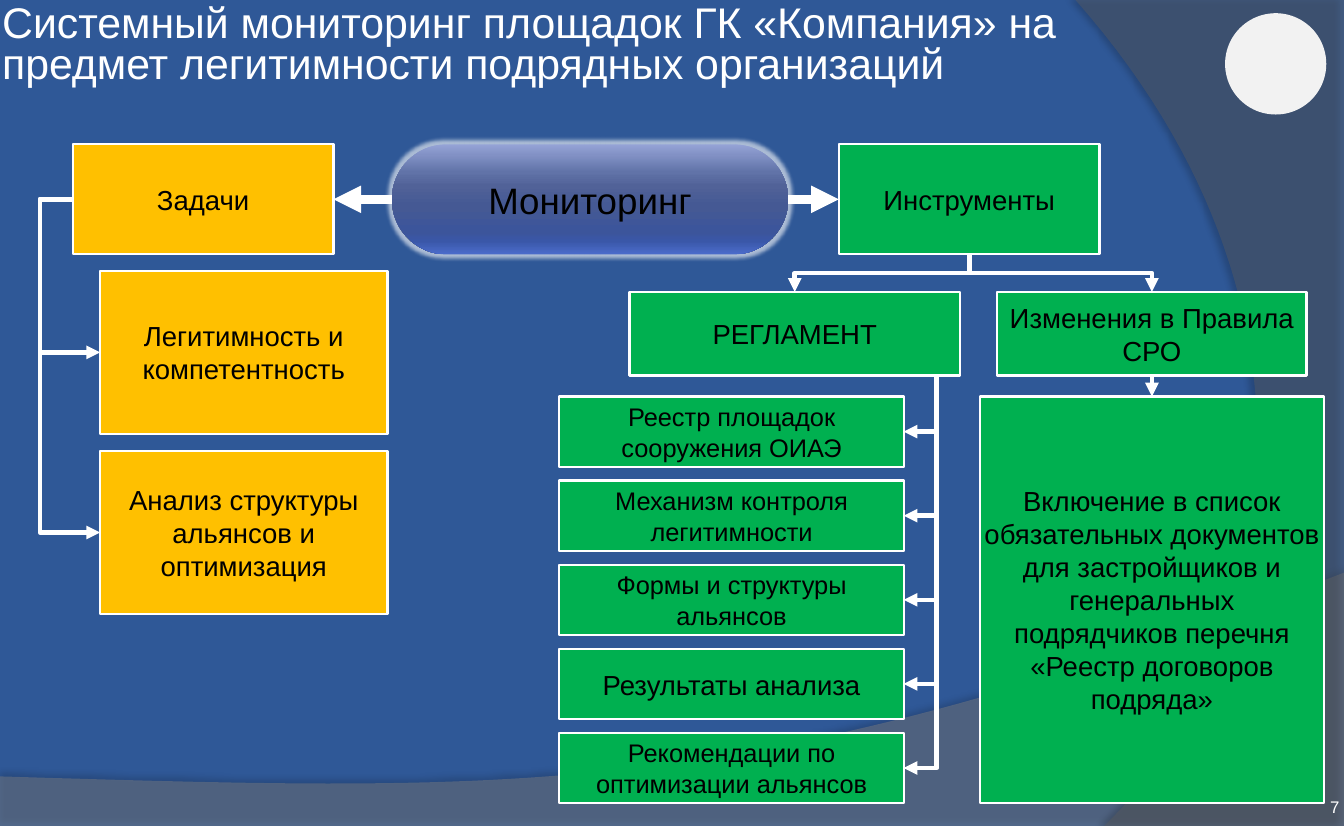
from dataclasses import dataclass
from lxml.etree import SubElement
from pptx import Presentation
from pptx.dml.color import RGBColor
from pptx.enum.shapes import MSO_CONNECTOR, MSO_SHAPE
from pptx.enum.text import MSO_ANCHOR, MSO_AUTO_SIZE, PP_ALIGN
from pptx.oxml.ns import qn
from pptx.shapes.autoshape import Shape
from pptx.shapes.connector import Connector
from pptx.text.text import TextFrame
from pptx.util import Inches, Pt

# Grid: 100 columns by 100 rows over the whole slide
WIDTH, HEIGHT = Inches(12.21), Inches(7.5)
COL, ROW = WIDTH / 100, HEIGHT / 100
FONT = "Arial"
HUES = {
    "back": "2F5897", "white": "FFFFFF", "black": "000000", "disc": "F2F2F2",
    "task": "FFC000", "tool": "00B050", "low": "7F7F7F", "side": "5E5E5E",
}
SHADES = [(0, "96A4D7"), (25, "6173A8"), (38, "516298"), (55, "455994"),
          (80, "3C559B"), (88, "3A57A8"), (100, "4B6CCB")]
Point = tuple[float, float]


@dataclass
class Box:
    text: str
    x: float
    y: float
    w: float
    h: float
    hue: str
    size: float = 18

    @property
    def mid(self) -> Point:
        return self.x + self.w / 2, self.y + self.h / 2


@dataclass
class Wave:
    start: Point
    sides: list[Point]
    curve: tuple[Point, Point, Point]
    hue: str
    alpha: int
    shade: int
    gap: float
    angle: int


def emu(x: float, y: float) -> tuple[int, int]:
    return round(x * COL), round(y * ROW)


def rgb(name: str) -> RGBColor:
    return RGBColor.from_string(HUES[name])


def tint(node, value: str, alpha: int) -> None:
    hue = SubElement(node, qn("a:srgbClr"), val=value)
    SubElement(hue, qn("a:alpha"), val=str(alpha * 1000))


def write(frame: TextFrame, text: str, size: float, hue: str, align: PP_ALIGN,
          anchor: MSO_ANCHOR, inset: float = 0) -> None:
    frame.text = text
    frame.word_wrap = True
    frame.auto_size = MSO_AUTO_SIZE.NONE
    frame.vertical_anchor = anchor
    frame.margin_left = frame.margin_right = Inches(inset)
    frame.margin_top = frame.margin_bottom = Inches(inset)
    line = frame.paragraphs[0]
    line.alignment = align
    font = line.runs[0].font
    font.size, font.name, font.bold = Pt(size), FONT, False
    font.color.rgb = rgb(hue)


def paint(shape: Shape, hue: str) -> None:
    shape.shadow.inherit = False
    shape.fill.solid()
    shape.fill.fore_color.rgb = rgb(hue)
    shape.line.fill.background()


def draw_wave(shapes, wave: Wave) -> None:
    a, (b, c, d) = wave.sides[-1], wave.curve
    steps = [i / 60 for i in range(1, 61)]
    arc = [tuple((1 - t) ** 3 * p + 3 * t * (1 - t) ** 2 * q
                 + 3 * t * t * (1 - t) * r + t ** 3 * s
                 for p, q, r, s in zip(a, b, c, d)) for t in steps]
    form = shapes.build_freeform(*emu(*wave.start))
    form.add_line_segments([emu(*p) for p in wave.sides + arc], close=True)
    shape = form.convert_to_shape()
    paint(shape, wave.hue)
    props = shape._element.spPr
    fill = props.find(qn("a:solidFill"))
    SubElement(fill[0], qn("a:alpha"), val=str(wave.alpha * 1000))
    shadow = SubElement(props.find(qn("a:effectLst")), qn("a:outerShdw"),
                        blurRad=str(Pt(4)), dist=str(Pt(wave.gap)),
                        dir=str(wave.angle * 60000), rotWithShape="0")
    tint(shadow, HUES["black"], wave.shade)


def draw_box(shapes, box: Box, kind: MSO_SHAPE = MSO_SHAPE.RECTANGLE) -> Shape:
    shape = shapes.add_shape(kind, *emu(box.x, box.y), *emu(box.w, box.h))
    paint(shape, box.hue)
    shape.line.color.rgb = rgb("white")
    shape.line.width = Pt(1.5)
    write(shape.text_frame, box.text, box.size, "black", PP_ALIGN.CENTER,
          MSO_ANCHOR.MIDDLE, 0.04)
    return shape


def style(link: Connector, width: float, end: str = "tailEnd") -> None:
    link.line.color.rgb = rgb("white")
    link.line.width = Pt(width)
    SubElement(link.line._get_or_add_ln(), qn("a:" + end), type="triangle")
    SubElement(link._element.spPr, qn("a:effectLst"))


def join(shapes, first: Shape, out: int, last: Shape, into: int, width: float) -> None:
    link = shapes.add_connector(MSO_CONNECTOR.STRAIGHT, 0, 0, 0, 0)
    link.begin_connect(first, out)
    link.end_connect(last, into)
    style(link, width)


def elbow(shapes, start: Point, end: Point, bend: float) -> Connector:
    """Elbow whose middle leg sits at the given share of its width."""
    link = shapes.add_connector(MSO_CONNECTOR.ELBOW, *emu(*start), *emu(*end))
    guides = link._element.spPr.find(qn("a:prstGeom")).get_or_add_avLst()
    SubElement(guides, qn("a:gd"), name="adj1", fmla=f"val {round(bend * 100000)}")
    return link


def drop(shapes, start: Point, end: Point) -> None:
    """Elbow that runs down, across and down: a level one turned by 90 degrees."""
    (x0, y0), (x1, y1) = emu(*start), emu(*end)
    cx, cy, dx, dy = (x0 + x1) / 2, (y0 + y1) / 2, x1 - x0, y1 - y0
    link = elbow(shapes, ((cx - dy / 2) / COL, (cy + dx / 2) / ROW),
                 ((cx + dy / 2) / COL, (cy - dx / 2) / ROW), 0.5)
    link._element.spPr.find(qn("a:xfrm")).set("rot", str(90 * 60000))
    style(link, 3)


def main() -> None:
    deck = Presentation()
    deck.slide_width, deck.slide_height = WIDTH, HEIGHT
    slide = deck.slides.add_slide(deck.slide_layouts[5])
    shapes = slide.shapes

    # Backdrop
    slide.background.fill.solid()
    slide.background.fill.fore_color.rgb = rgb("back")
    for wave in (
        Wave((0, 94), [(0, 100), (100, 100), (100, 69.33)],
             ((55.86, 97.2), (39.07, 95.87), (0, 94)), "low", 45, 35, 3.5, 270),
        Wave((100, 0), [(100, 100), (82.15, 100)],
             ((93.45, 82.53), (101.72, 40), (80.02, 0)), "side", 40, 45, 4, 180),
    ):
        draw_wave(shapes, wave)
    disc = shapes.add_shape(MSO_SHAPE.OVAL, *emu(91.15, 1.6), *emu(7.53, 12.27))
    paint(disc, "disc")

    # Title and page number
    title = shapes.title
    title.left, title.top = emu(0.16, 0.67)
    title.width, title.height = emu(82.88, 8.4)
    write(title.text_frame, "Системный мониторинг площадок ГК «Компания» на предмет "
          "легитимности подрядных организаций", 28, "white", PP_ALIGN.LEFT, MSO_ANCHOR.TOP)
    title.text_frame.paragraphs[0].line_spacing = 0.8
    page = shapes.add_textbox(*emu(91.32, 93.6), *emu(8.35, 5.33))
    write(page.text_frame, "7", 11, "white", PP_ALIGN.RIGHT, MSO_ANCHOR.BOTTOM)

    # Top row
    goal = Box("Задачи", 5.41, 17.47, 19.41, 13.33, "task")
    kit = Box("Инструменты", 62.41, 17.47, 19.41, 13.33, "tool")
    hub = Box("Мониторинг", 29.16, 17.47, 29.48, 13.33, "task", 24)
    left, right = draw_box(shapes, goal), draw_box(shapes, kit)
    core = draw_box(shapes, hub, MSO_SHAPE.ROUNDED_RECTANGLE)
    core.adjustments[0] = 0.5
    core.line.fill.background()
    core.fill.gradient()
    core.fill.gradient_angle = 270
    props = core._element.spPr
    stops = props.find(qn("a:gradFill")).find(qn("a:gsLst"))
    stops.clear()
    for place, shade in SHADES:
        stop = SubElement(stops, qn("a:gs"), pos=str(place * 1000))
        SubElement(stop, qn("a:srgbClr"), val=shade)
    glow = SubElement(props.find(qn("a:effectLst")), qn("a:glow"), rad=str(Pt(5)))
    tint(glow, HUES["white"], 60)
    join(shapes, core, 1, left, 3, 6)
    join(shapes, core, 3, right, 1, 6)

    # Tasks
    for i, text in enumerate(("Легитимность и компетентность",
                              "Анализ структуры альянсов и оптимизация")):
        box = Box(text, 7.45, 32.8 + i * 21.8, 21.38, 19.73, "task")
        draw_box(shapes, box)
        style(elbow(shapes, (goal.x, goal.mid[1]), (box.x, box.mid[1]), -1.2), 3)

    # Branches of the tools
    rules = Box("РЕГЛАМЕНТ", 46.85, 35.33, 24.57, 10.13, "tool")
    edits = Box("Изменения в Правила СРО", 74.2, 35.33, 23.01, 10.13, "tool")
    for box in (rules, edits):
        last = draw_box(shapes, box)
        drop(shapes, (kit.mid[0], kit.y + kit.h), (box.mid[0], box.y))
    scope = draw_box(shapes, Box(
        "Включение в список обязательных документов для застройщиков и генеральных "
        "подрядчиков перечня «Реестр договоров подряда»", 72.89, 48, 25.63, 49.2, "tool"))
    join(shapes, last, 2, scope, 0, 3)

    # Parts of the rules, hung on one trunk
    for i, (text, size) in enumerate((
        ("Реестр площадок сооружения ОИАЭ", 16.6),
        ("Механизм контроля легитимности", 16.6),
        ("Формы и структуры альянсов", 16.6),
        ("Результаты анализа", 18),
        ("Рекомендации по оптимизации альянсов", 16.6),
    )):
        box = Box(text, 41.61, 48 + i * 10.18, 25.63, 8.53, "tool", size)
        draw_box(shapes, box)
        link = shapes.add_connector(MSO_CONNECTOR.ELBOW, *emu(box.x + box.w, box.mid[1]),
                                    *emu(69.7, rules.y + rules.h))
        link._element.spPr.find(qn("a:prstGeom")).set("prst", "bentConnector2")
        style(link, 3, "headEnd")

    deck.save("out.pptx")


if __name__ == "__main__":
    main()
